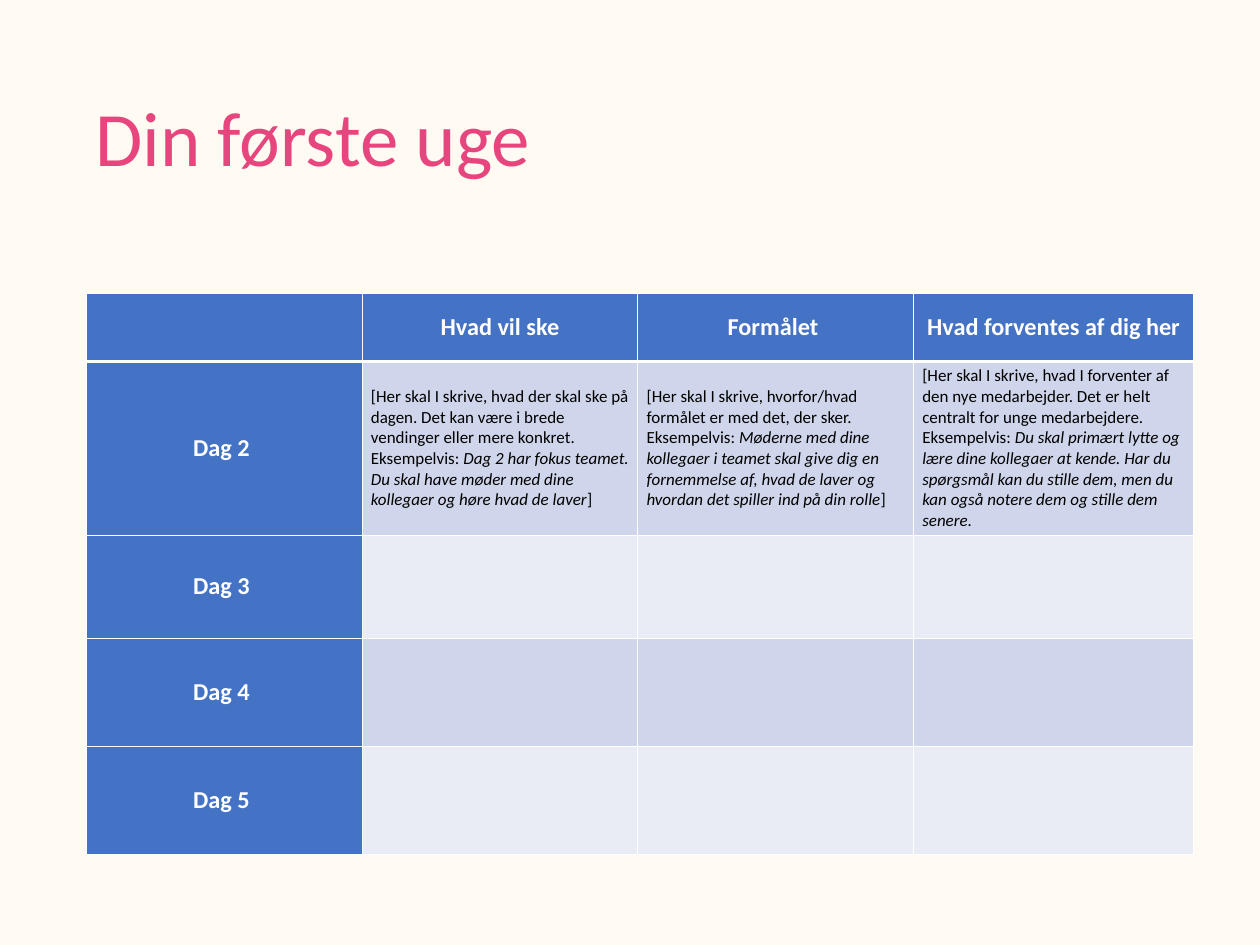
from dataclasses import dataclass

from lxml.etree import SubElement
from pptx import Presentation
from pptx.dml.color import RGBColor
from pptx.enum.text import MSO_ANCHOR as Anchor, MSO_AUTO_SIZE as AutoSize, PP_ALIGN as Align
from pptx.oxml.ns import qn
from pptx.slide import Slide
from pptx.table import _Cell as Cell
from pptx.util import Emu, Pt

PX = 9144  # 100 px to the inch
FONT = "Calibri"
COLORS = {
    "background": "FFFAF2",
    "title": "E6467D",
    "heading": "4472C4",
    "band_dark": "CFD5EA",
    "band_light": "E9EBF5",
    "white": "FFFFFF",
    "black": "000000",
}
COLUMN_WIDTHS = (316, 316, 316, 321)
ROW_HEIGHTS = (78, 184, 118, 124, 124)


@dataclass(frozen=True)
class Guidance:
    instruction: str = ""
    example: str = ""
    closing: str = ""


@dataclass(frozen=True)
class Day:
    name: str
    guidance: tuple[Guidance, ...] = (Guidance(),) * 3


HEADINGS = ("", "Hvad vil ske", "Formålet ", "Hvad forventes af dig her")
DAYS = (
    Day("Dag 2 ", (
        Guidance(
            "[Her skal I skrive, hvad der skal ske på dagen. Det kan være i brede "
            "vendinger eller mere konkret. Eksempelvis: ",
            "Dag 2 har fokus teamet. Du skal have møder med dine kollegaer og høre "
            "hvad de laver",
            "]",
        ),
        Guidance(
            "[Her skal I skrive, hvorfor/hvad formålet er med det, der sker. "
            "Eksempelvis: ",
            "Møderne med dine kollegaer i teamet skal give dig en fornemmelse af, "
            "hvad de laver og hvordan det spiller ind på din rolle",
            "]",
        ),
        Guidance(
            "[Her skal I skrive, hvad I forventer af den nye medarbejder. Det er helt "
            "centralt for unge medarbejdere. Eksempelvis: ",
            "Du skal primært lytte og lære dine kollegaer at kende. Har du spørgsmål "
            "kan du stille dem, men du kan også notere dem og stille dem senere.",
        ),
    )),
    Day("Dag 3 "),
    Day("Dag 4 "),
    Day("Dag 5 "),
)


def px(length: int) -> Emu:
    return Emu(length * PX)


def color(name: str) -> RGBColor:
    return RGBColor.from_string(COLORS[name])


def style_cell(cell: Cell, fill: str, top: int = 1, bottom: int = 1) -> None:
    """Give a cell white borders, in points, and a fill."""
    properties = cell._tc.get_or_add_tcPr()
    for side, width in (("L", 1), ("R", 1), ("T", top), ("B", bottom)):
        line = SubElement(properties, qn(f"a:ln{side}"), w=str(Pt(width)))
        line_fill = SubElement(line, qn("a:solidFill"))
        SubElement(line_fill, qn("a:srgbClr"), val=COLORS["white"])
    cell.fill.solid()
    cell.fill.fore_color.rgb = color(fill)
    cell.vertical_anchor = Anchor.MIDDLE


def write_heading(cell: Cell, text: str) -> None:
    paragraph = cell.text_frame.paragraphs[0]
    paragraph.text = text
    paragraph.alignment = Align.CENTER
    for run in paragraph.runs:
        run.font.name, run.font.size, run.font.bold = FONT, Pt(20), True
        run.font.color.rgb = color("white")


def write_guidance(cell: Cell, guidance: Guidance) -> None:
    paragraph = cell.text_frame.paragraphs[0]
    for text in (guidance.instruction, guidance.example, guidance.closing):
        if text:
            run = paragraph.add_run()
            run.text = text
            run.font.name, run.font.size, run.font.bold = FONT, Pt(14), False
            run.font.italic = text == guidance.example
            run.font.color.rgb = color("black")


def add_title(slide: Slide) -> None:
    title = slide.shapes.title
    title.left, title.top, title.width, title.height = map(px, (99, 58, 1246, 209))
    frame = title.text_frame
    frame.text = "Din første uge"
    frame.word_wrap = True
    frame.auto_size = AutoSize.NONE
    frame.vertical_anchor = Anchor.MIDDLE
    paragraph = frame.paragraphs[0]
    paragraph.alignment = Align.LEFT
    paragraph.line_spacing = 0.9
    font = paragraph.runs[0].font
    font.name, font.size = FONT, Pt(63.5)
    font.color.rgb = color("title")


def add_week_table(slide: Slide) -> None:
    table = slide.shapes.add_table(
        len(ROW_HEIGHTS), len(COLUMN_WIDTHS), px(99), px(336),
        px(sum(COLUMN_WIDTHS)), px(sum(ROW_HEIGHTS)),
    ).table
    for column, width in zip(table.columns, COLUMN_WIDTHS):
        column.width = px(width)
    for row, height in zip(table.rows, ROW_HEIGHTS):
        row.height = px(height)

    # Header row
    for column_index, heading in enumerate(HEADINGS):
        cell = table.cell(0, column_index)
        style_cell(cell, "heading", bottom=3)
        write_heading(cell, heading)

    # One row per day, in alternating bands
    for row_index, day in enumerate(DAYS, start=1):
        top = 3 if row_index == 1 else 1
        name_cell = table.cell(row_index, 0)
        style_cell(name_cell, "heading", top=top)
        write_heading(name_cell, day.name)
        band = "band_dark" if row_index % 2 else "band_light"
        for column_index, guidance in enumerate(day.guidance, start=1):
            cell = table.cell(row_index, column_index)
            style_cell(cell, band, top=top)
            write_guidance(cell, guidance)


def main() -> None:
    presentation = Presentation()
    presentation.slide_width, presentation.slide_height = px(1444), px(1083)
    slide = presentation.slides.add_slide(presentation.slide_layouts[5])
    slide.background.fill.solid()
    slide.background.fill.fore_color.rgb = color("background")
    add_title(slide)
    add_week_table(slide)
    presentation.save("out.pptx")


if __name__ == "__main__":
    main()
